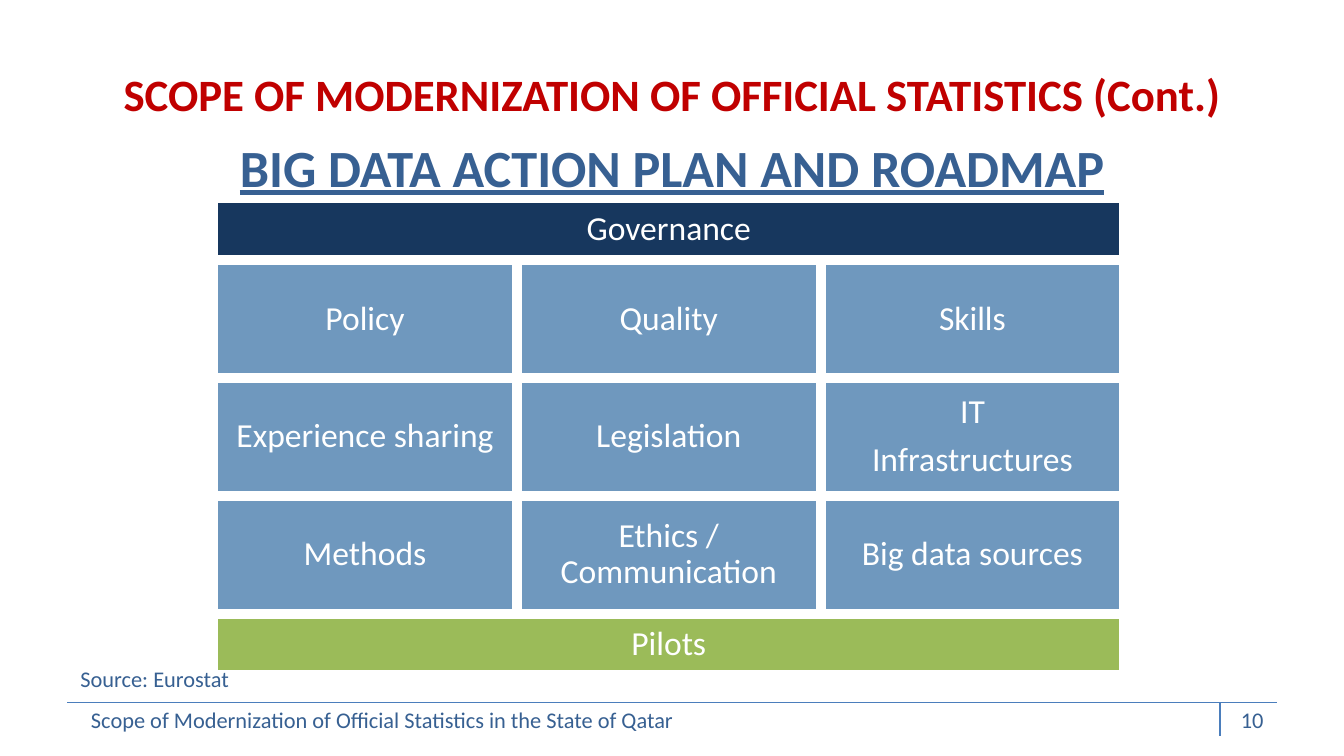
from dataclasses import dataclass

from lxml.etree import SubElement
from pptx import Presentation
from pptx.dml.color import RGBColor
from pptx.enum.shapes import MSO_CONNECTOR, MSO_SHAPE
from pptx.enum.text import MSO_ANCHOR, MSO_AUTO_SIZE, PP_ALIGN
from pptx.oxml.ns import qn
from pptx.util import Cm, Pt


@dataclass(frozen=True)
class Theme:
    font: str = "Calibri"
    ink: str = "376092"
    red: str = "C00000"
    navy: str = "17375E"
    blue: str = "0F5494"
    green: str = "9BBB59"
    rule: str = "4B7EBC"
    white: str = "FFFFFF"
    small: int = 12
    body: int = 18
    head: int = 24
    title: int = 28


THEME = Theme()
CELLS = [
    ["Policy", "Quality", "Skills"],
    ["Experience sharing", "Legislation", "IT\nInfrastructures"],
    ["Methods", "Ethics / Communication", "Big data sources"],
]


def rgb(code):
    return RGBColor.from_string(code)


def write(shape, text, size=THEME.small, color=THEME.ink, bold=False,
          under=False, align=PP_ALIGN.LEFT, anchor=MSO_ANCHOR.TOP,
          inset=None, spacing=None, after=None):
    frame = shape.text_frame
    frame.text = text
    frame.word_wrap = True
    frame.auto_size = MSO_AUTO_SIZE.NONE
    frame.vertical_anchor = anchor
    if inset is not None:
        frame.margin_left = frame.margin_right = Cm(inset)
        frame.margin_top = frame.margin_bottom = Cm(inset)
    for para in frame.paragraphs:
        para.alignment = align
        if spacing is not None:
            para.line_spacing = spacing
        if after is not None:
            para.space_after = Pt(after)
        for run in para.runs:
            font = run.font
            font.name, font.size, font.bold = THEME.font, Pt(size), bold
            font.underline = under
            font.color.rgb = rgb(color)


def label(slide, box, text, **style):
    write(slide.shapes.add_textbox(*map(Cm, box)), text, **style)


def rule(slide, x1, y1, x2, y2):
    line = slide.shapes.add_connector(
        MSO_CONNECTOR.STRAIGHT, Cm(x1), Cm(y1), Cm(x2), Cm(y2))
    line.line.color.rgb = rgb(THEME.rule)
    line.line.width = Pt(0.75)
    SubElement(line._element.spPr, qn("a:effectLst"))


def tile(slide, box, text, fill, alpha=None):
    """Add a white-edged block; alpha is its opacity in percent."""
    shape = slide.shapes.add_shape(MSO_SHAPE.RECTANGLE, *map(Cm, box))
    shape.shadow.inherit = False
    shape.fill.solid()
    shape.fill.fore_color.rgb = rgb(fill)
    if alpha is not None:
        color = shape._element.spPr.find(qn("a:solidFill"))[0]
        SubElement(color, qn("a:alpha"), val=str(alpha * 1000))
    shape.line.color.rgb = rgb(THEME.white)
    shape.line.width = Pt(2)
    write(shape, text, size=THEME.body, color=THEME.white,
          align=PP_ALIGN.CENTER, anchor=MSO_ANCHOR.MIDDLE, inset=0.18,
          spacing=0.9, after=6.3)


def heading(slide, box):
    left, top, width, height = box
    style = dict(bold=True, align=PP_ALIGN.CENTER, anchor=MSO_ANCHOR.MIDDLE)
    title = slide.shapes.title
    title.left, title.top = Cm(left), Cm(top + 1.37)
    title.width, title.height = Cm(width), Cm(height)
    write(title, "BIG DATA ACTION PLAN AND ROADMAP", size=THEME.title,
          under=True, **style)
    label(slide, box, "SCOPE OF MODERNIZATION OF OFFICIAL STATISTICS (Cont.)",
          size=THEME.head, color=THEME.red, **style)


def roadmap(slide, box, band=1.05, gap=0.12):
    """Stack a band, the grid of cells and a second band."""
    left, top, width, height = box
    cols, rows = len(CELLS[0]), len(CELLS)
    wide = (width - gap * (cols - 1)) / cols
    high = (height - 2 * band - gap * (rows + 1)) / rows
    tile(slide, (left, top, width, band), "Governance", THEME.navy)
    for r, row in enumerate(CELLS):
        for c, text in enumerate(row):
            x = left + c * (wide + gap)
            y = top + band + gap + r * (high + gap)
            tile(slide, (x, y, wide, high), text, THEME.blue, alpha=60)
    tile(slide, (left, top + height - band, width, band), "Pilots", THEME.green)


def footer(slide, box):
    left, top, width, height = box
    right, split = left + width, left + width - 1.07
    rule(slide, left, top, right, top)
    rule(slide, split, top, split, top + height)
    label(slide, (left, top - 0.84, 3.91, 0.77), "Source: Eurostat")
    label(slide, (left + 0.2, top - 0.05, 13.97, 0.77),
          "Scope of Modernization of Official Statistics in the State of Qatar")
    label(slide, (right - 5.92, top - 0.05, 5.92, 0.77), "10",
          align=PP_ALIGN.RIGHT)


def main():
    deck = Presentation()
    deck.slide_width, deck.slide_height = Cm(25.4), Cm(14.29)
    slide = deck.slides.add_slide(deck.slide_layouts[5])
    heading(slide, (1.27, 0.58, 22.86, 2.39))
    roadmap(slide, (4.09, 3.81, 17.1, 8.9))
    footer(slide, (1.27, 13.28, 22.86, 0.64))
    deck.save("out.pptx")


if __name__ == "__main__":
    main()
